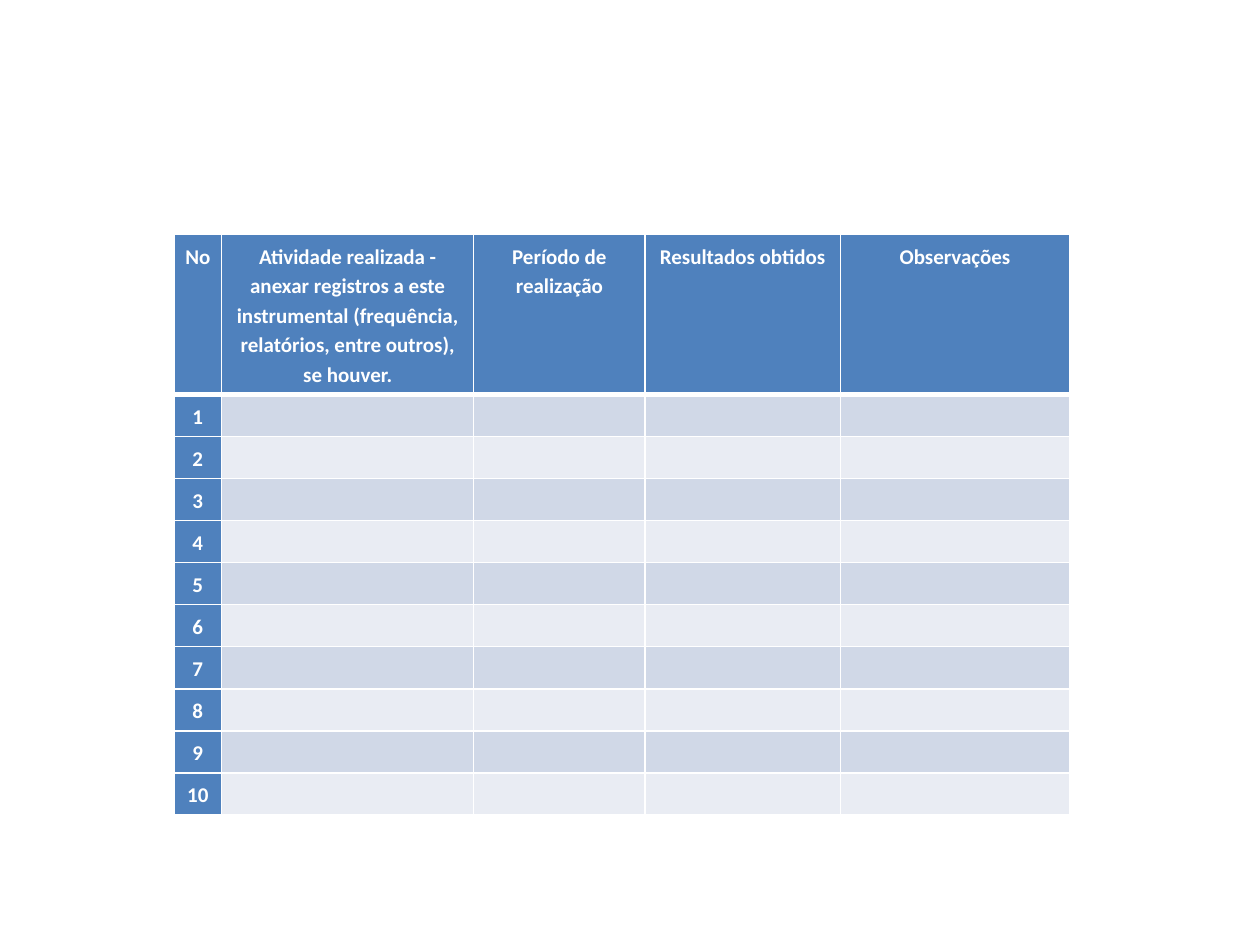
from dataclasses import dataclass

from lxml.etree import SubElement
from pptx import Presentation
from pptx.dml.color import RGBColor
from pptx.enum.text import PP_ALIGN as Align
from pptx.oxml.ns import qn
from pptx.util import Inches, Pt

COLORS = {"accent": "4F81BD", "odd": "D0D8E7", "even": "E9ECF3", "white": "FFFFFF"}
FONT = {"name": "Calibri", "size": Pt(12), "bold": True}
MARGINS = {
    "margin_left": Inches(0.07),
    "margin_right": Inches(0.07),
    "margin_top": Inches(0.05),
    "margin_bottom": Inches(0.05),
}
PARAGRAPH = {"alignment": Align.CENTER, "line_spacing": 1.15}
SIDES = ("L", "R", "T", "B")
THIN, THICK = 0.96, 3
ACTIVITIES = 10
LEFT, TOP = 1.38, 1.86
HEADER_HEIGHT, ROW_HEIGHT = 1.27, 0.33


@dataclass(frozen=True)
class Column:
    heading: str
    width: float


COLUMNS = (
    Column("No", 0.38),
    Column(
        "Atividade realizada - anexar registros a este instrumental "
        "(frequência, relatórios, entre outros), se houver.",
        2,
    ),
    Column("Período de realização", 1.36),
    Column("Resultados obtidos", 1.55),
    Column("Observações", 1.82),
)


def apply_format(target: object, values: dict) -> None:
    for name, value in values.items():
        setattr(target, name, value)


def set_borders(cell, widths: dict[str, float]) -> None:
    properties = cell._tc.get_or_add_tcPr()
    for index, side in enumerate(SIDES):
        line = properties.makeelement(qn(f"a:ln{side}"), {"w": str(Pt(widths[side]))})
        fill = SubElement(line, qn("a:solidFill"))
        SubElement(fill, qn("a:srgbClr"), val=COLORS["white"])
        properties.insert(index, line)


def write_text(cell, text: str) -> None:
    paragraph = cell.text_frame.paragraphs[0]
    apply_format(paragraph, PARAGRAPH)
    if text:
        run = paragraph.add_run()
        run.text = text
        apply_format(run.font, FONT)
        run.font.color.rgb = RGBColor.from_string(COLORS["white"])
    else:
        SubElement(paragraph._p, qn("a:endParaRPr"), sz=str(FONT["size"].centipoints))


def format_cell(cell, row: int, column: int) -> None:
    is_heading = row == 0 or column == 0
    color = "accent" if is_heading else ("even", "odd")[row % 2]
    cell.fill.solid()
    cell.fill.fore_color.rgb = RGBColor.from_string(COLORS[color])
    apply_format(cell, MARGINS)
    set_borders(
        cell,
        {
            "L": THIN,
            "R": THIN,
            "T": THICK if row == 1 else THIN,
            "B": THICK if row == 0 else THIN,
        },
    )


def add_activity_table(slide) -> None:
    width = sum(column.width for column in COLUMNS)
    height = HEADER_HEIGHT + ACTIVITIES * ROW_HEIGHT
    table = slide.shapes.add_table(
        ACTIVITIES + 1, len(COLUMNS),
        Inches(LEFT), Inches(TOP), Inches(width), Inches(height),
    ).table
    table.first_col = True
    for index, column in enumerate(COLUMNS):
        table.columns[index].width = Inches(column.width)
    for row in range(ACTIVITIES + 1):
        table.rows[row].height = Inches(ROW_HEIGHT if row else HEADER_HEIGHT)
        for index, column in enumerate(COLUMNS):
            cell = table.cell(row, index)
            number = "" if index else str(row)
            write_text(cell, number if row else column.heading)
            format_cell(cell, row, index)


def main() -> None:
    presentation = Presentation()
    presentation.slide_width = Inches(10)
    presentation.slide_height = Inches(7.5)
    slide = presentation.slides.add_slide(presentation.slide_layouts[6])
    add_activity_table(slide)
    presentation.save("out.pptx")


if __name__ == "__main__":
    main()
